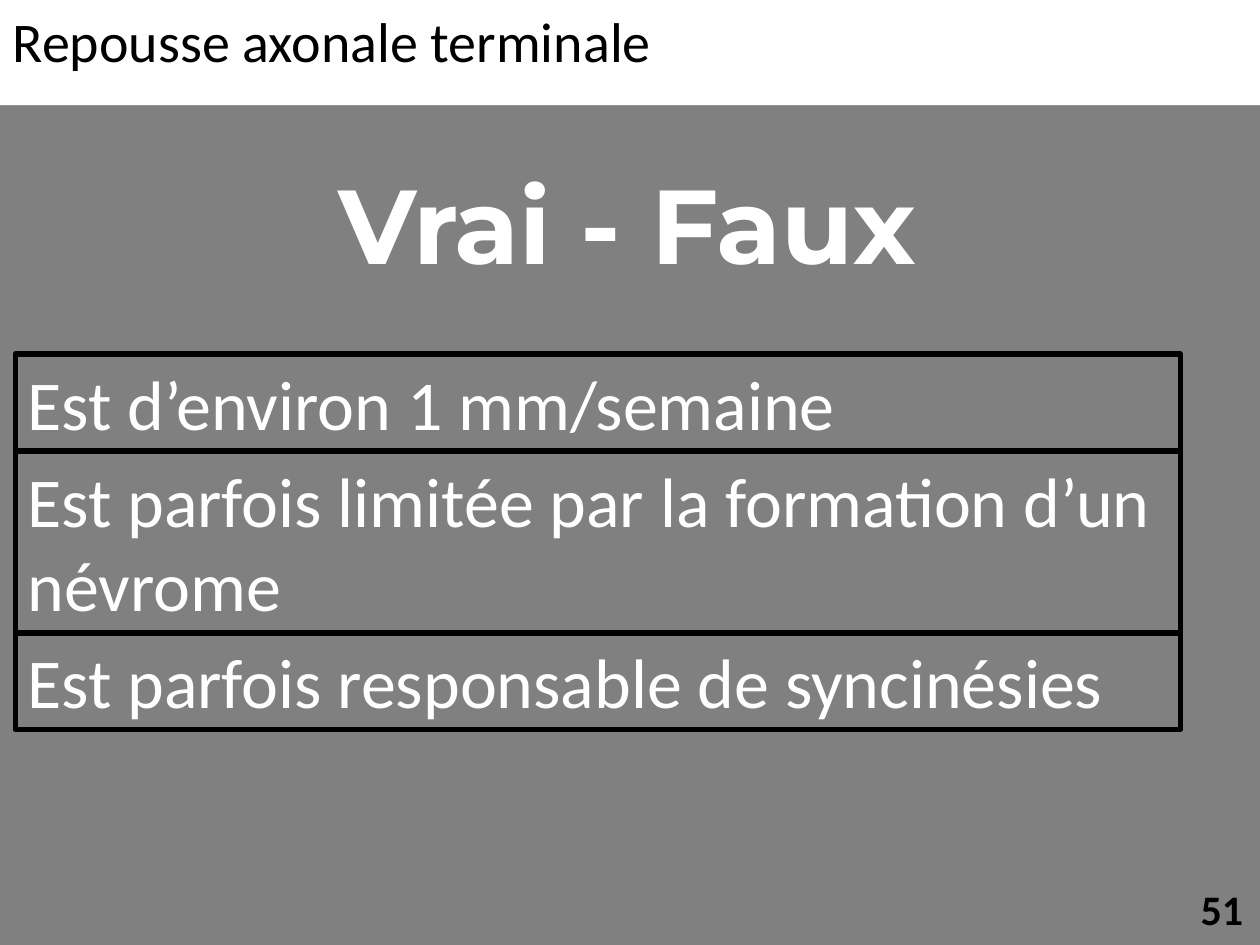
from pptx import Presentation
from pptx.dml.color import RGBColor
from pptx.enum.shapes import MSO_SHAPE
from pptx.enum.text import MSO_ANCHOR, MSO_AUTO_SIZE, PP_ALIGN
from pptx.util import Inches, Pt

BLACK, WHITE, GREY = "000000", "FFFFFF", "808080"
STATEMENTS = [  # text, top, height
    ("Est d’environ 1 mm/semaine", 2.81, 0.77),
    ("Est parfois limitée par la formation d’un névrome", 3.58, 1.45),
    ("Est parfois responsable de syncinésies", 5.02, 0.77),
]


def paint(fill, color):
    fill.solid()
    fill.fore_color.rgb = RGBColor.from_string(color)


def write(shape, text, size, color, font="Calibri", bold=False,
          align=PP_ALIGN.LEFT, wrap=True):
    frame = shape.text_frame
    frame_format = {
        "word_wrap": wrap, "auto_size": MSO_AUTO_SIZE.SHAPE_TO_FIT_TEXT,
        "vertical_anchor": MSO_ANCHOR.TOP,
        "margin_left": Inches(0.1), "margin_right": Inches(0.1),
        "margin_top": Inches(0.05), "margin_bottom": Inches(0.05),
    }
    for name, value in frame_format.items():
        setattr(frame, name, value)
    para = frame.paragraphs[0]
    para.alignment = align
    para.line_spacing = 1.0
    span = para.add_run()
    span.text = text
    for name, value in {"size": Pt(size), "name": font, "bold": bold}.items():
        setattr(span.font, name, value)
    span.font.color.rgb = RGBColor.from_string(color)


def add_title(page, text):
    title = page.shapes.title
    place = {"left": 0, "top": 0, "width": Inches(10), "height": Inches(0.64)}
    for name, value in place.items():
        setattr(title, name, value)
    paint(title.fill, WHITE)
    write(title, text, 32, BLACK)


def add_label(page, left, top, width, height, text, size, color, **style):
    box = page.shapes.add_textbox(
        Inches(left), Inches(top), Inches(width), Inches(height))
    write(box, text, size, color, wrap=False, **style)


def add_statement(page, text, top, height):
    box = page.shapes.add_shape(
        MSO_SHAPE.RECTANGLE,
        Inches(0.12), Inches(top), Inches(9.25), Inches(height))
    box.shadow.inherit = False
    box.fill.background()
    paint(box.line.fill, BLACK)
    box.line.width = Pt(3)
    write(box, text, 40, WHITE)


def main():
    deck = Presentation()
    deck.slide_width, deck.slide_height = Inches(10), Inches(7.5)
    page = deck.slides.add_slide(deck.slide_layouts[5])
    paint(page.background.fill, GREY)

    # Title band and page number
    add_title(page, "Repousse axonale terminale")
    add_label(page, 9.43, 6.96, 0.54, 0.5, "51", 24, BLACK, bold=True)

    # Statements to judge
    for statement in STATEMENTS:
        add_statement(page, *statement)

    # Question heading
    add_label(page, 2.41, 1.22, 5.14, 1.11, "Vrai - Faux", 60, WHITE,
              font="Montserrat", bold=True, align=PP_ALIGN.CENTER)

    deck.save("out.pptx")


if __name__ == "__main__":
    main()
